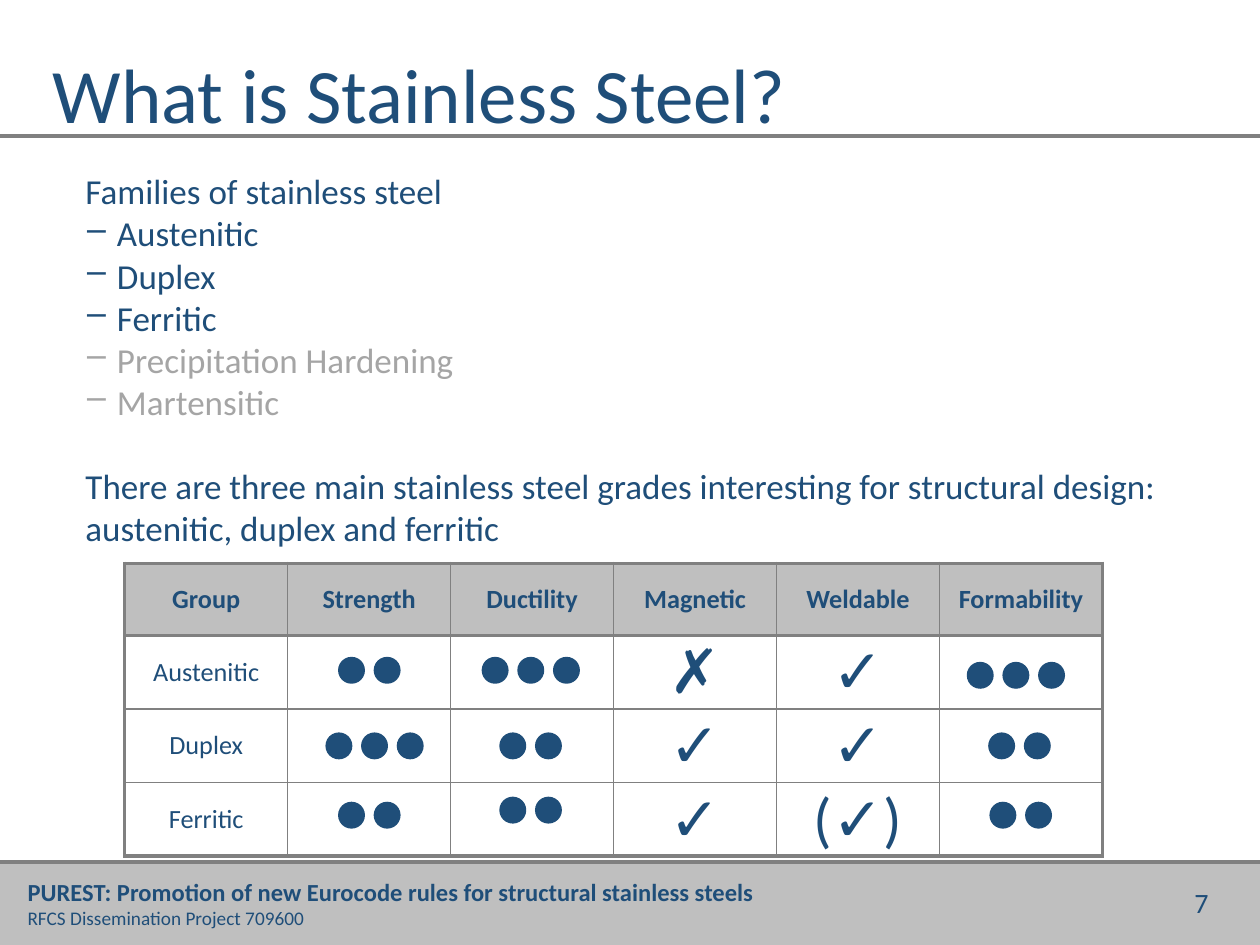
from lxml import etree
from pptx import Presentation
from pptx.dml.color import RGBColor
from pptx.enum.shapes import MSO_CONNECTOR, MSO_SHAPE
from pptx.enum.text import MSO_ANCHOR, MSO_AUTO_SIZE, PP_ALIGN
from pptx.oxml.ns import qn
from pptx.util import Inches, Pt

LEFT, CENTER, RIGHT = PP_ALIGN.LEFT, PP_ALIGN.CENTER, PP_ALIGN.RIGHT
TOP, MIDDLE = MSO_ANCHOR.TOP, MSO_ANCHOR.MIDDLE
NO_FIT = MSO_AUTO_SIZE.NONE
STRAIGHT = MSO_CONNECTOR.STRAIGHT
RECTANGLE, OVAL = MSO_SHAPE.RECTANGLE, MSO_SHAPE.OVAL

THEME = {
    "font": "Calibri",
    "navy": "1F4E79", "muted": "A5A5A5", "band": "BFBFBF",
    "rule": "808080", "paper": "FFFFFF",
    "title": 44, "body": 20, "cell": 15, "symbol": 35,
    "project": 14, "funding": 11, "number": 16,
    "thin": 1, "thick": 2.25, "divider": 2,
}

deck = Presentation()
deck.slide_width, deck.slide_height = Inches(10), Inches(7.5)
page = deck.slides.add_slide(deck.slide_layouts[5])

# The page is a grid of 100 columns by 75 rows of square units
UNIT = deck.slide_width // 100


def grid(*lengths):
    return [round(length * UNIT) for length in lengths]


def write(para, text, size, color="navy", bold=False, align=LEFT):
    para.alignment = align
    span = para.add_run()
    span.text = text
    formats = {"name": THEME["font"], "size": Pt(THEME[size]), "bold": bold}
    for name, value in formats.items():
        setattr(span.font, name, value)
    span.font.color.rgb = RGBColor.from_string(THEME[color])


# Footer band
band = page.shapes.add_shape(RECTANGLE, *grid(0, 68.4, 100, 6.6))
band.shadow.inherit = False
band.fill.solid()
band.fill.fore_color.rgb = RGBColor.from_string(THEME["band"])
band.line.color.rgb = RGBColor.from_string(THEME["band"])
band.line.width = Pt(THEME["thin"])

# Full-width rules above the footer and under the title
for row in (68.4, 10.8):
    rule = page.shapes.add_connector(STRAIGHT, *grid(0, row, 100, row))
    rule.line.color.rgb = RGBColor.from_string(THEME["rule"])
    rule.line.width = Pt(THEME["divider"])
    etree.SubElement(rule.element.spPr, qn("a:effectLst"))

# Footer text and page number
footer = page.shapes.add_textbox(*grid(1.2, 69.1, 60.1, 5.2)).text_frame
footer.word_wrap = False
write(footer.paragraphs[0],
      "PUREST: Promotion of new Eurocode rules for structural stainless steels",
      "project", bold=True)
write(footer.add_paragraph(), "RFCS Dissemination Project 709600", "funding")

number = page.shapes.add_textbox(*grid(74.4, 69.8, 22.5, 4)).text_frame
number.word_wrap = True
write(number.paragraphs[0], "7", "number", align=RIGHT)

# Title
title = page.shapes.title
title.left, title.top, title.width, title.height = grid(3.2, 4, 93.5, 6.8)
title_format = {"word_wrap": True, "auto_size": NO_FIT, "vertical_anchor": TOP}
for name, value in title_format.items():
    setattr(title.text_frame, name, value)
title.text_frame.paragraphs[0].line_spacing = 0.9
write(title.text_frame.paragraphs[0], "What is Stainless Steel?", "title")

# Families list and closing statement
body = page.shapes.add_textbox(*grid(5.8, 13, 88.5, 53.4)).text_frame
body.word_wrap = True
write(body.paragraphs[0], "Families of stainless steel", "body")
families = {"Austenitic": "navy", "Duplex": "navy", "Ferritic": "navy",
            "Precipitation Hardening": "muted", "Martensitic": "muted"}
for family, color in families.items():
    para = body.add_paragraph()
    write(para, family, "body", color)
    properties = para._p.get_or_add_pPr()
    properties.set("marL", str(Inches(0.25)))
    properties.set("indent", str(-Inches(0.25)))
    etree.SubElement(properties, qn("a:buChar"), char="‒")
closing = body.add_paragraph()
closing.space_before = Pt(24)
write(closing,
      "There are three main stainless steel grades interesting for structural "
      "design: austenitic, duplex and ferritic", "body")

# Comparison table: blank cells are rated with dots
ratings = [
    ["Group", "Strength", "Ductility", "Magnetic", "Weldable", "Formability"],
    ["Austenitic", "", "", "✗", "✓", ""],
    ["Duplex", "", "", "✓", "✓", ""],
    ["Ferritic", "", "", "✓", "(✓)", ""],
]
last_row, last_column = len(ratings) - 1, len(ratings[0]) - 1
table = page.shapes.add_table(
    len(ratings), len(ratings[0]), *grid(9.9, 44.7, 77.6, 23.2)).table
table.first_row = table.horz_banding = False
for index, row in enumerate(table.rows):
    row.height = grid(5.8 if index else 5.74)[0]

for r, texts in enumerate(ratings):
    for c, text in enumerate(texts):
        cell = table.cell(r, c)
        is_symbol = r > 0 and c > 0
        margin = 0 if is_symbol else Inches(0.04)
        cell_format = {"vertical_anchor": MIDDLE, "margin_left": Inches(0.09),
                       "margin_right": Inches(0.09), "margin_top": margin,
                       "margin_bottom": margin}
        for name, value in cell_format.items():
            setattr(cell, name, value)
        if text:
            write(cell.text_frame.paragraphs[0], text,
                  "symbol" if is_symbol else "cell", bold=r == 0, align=CENTER)

        # Thick lines frame the table and close the header row
        thick_sides = {"lnL": c == 0, "lnR": c == last_column,
                       "lnT": r <= 1, "lnB": r in (0, last_row)}
        for side, is_thick in thick_sides.items():
            width = Pt(THEME["thick" if is_thick else "thin"])
            border = etree.SubElement(cell._tc.get_or_add_tcPr(),
                                      qn(f"a:{side}"), w=str(width))
            fill = etree.SubElement(border, qn("a:solidFill"))
            etree.SubElement(fill, qn("a:srgbClr"), val=THEME["rule"])
        cell.fill.solid()
        cell.fill.fore_color.rgb = RGBColor.from_string(
            THEME["paper" if r else "band"])

# Dot ratings: left column, top row and number of dots
DOT, PITCH = 2, 2.83
dot_ratings = [
    (25.9, 58.2, 3), (26.9, 52.2, 2), (38.3, 52.2, 3),
    (39.7, 58.2, 2), (76.8, 52.6, 3), (78.5, 58.2, 2),
    (26.9, 63.7, 2), (39.7, 63.3, 2), (78.6, 63.7, 2),
]
for left, top, count in dot_ratings:
    rating = page.shapes.add_group_shape()
    for index in range(count):
        dot = rating.shapes.add_shape(
            OVAL, *grid(left + index * PITCH, top, DOT, DOT))
        dot.shadow.inherit = False
        dot.fill.solid()
        dot.fill.fore_color.rgb = RGBColor.from_string(THEME["navy"])
        dot.line.color.rgb = RGBColor.from_string(THEME["navy"])
        dot.line.width = Pt(THEME["thin"])

deck.save("out.pptx")
